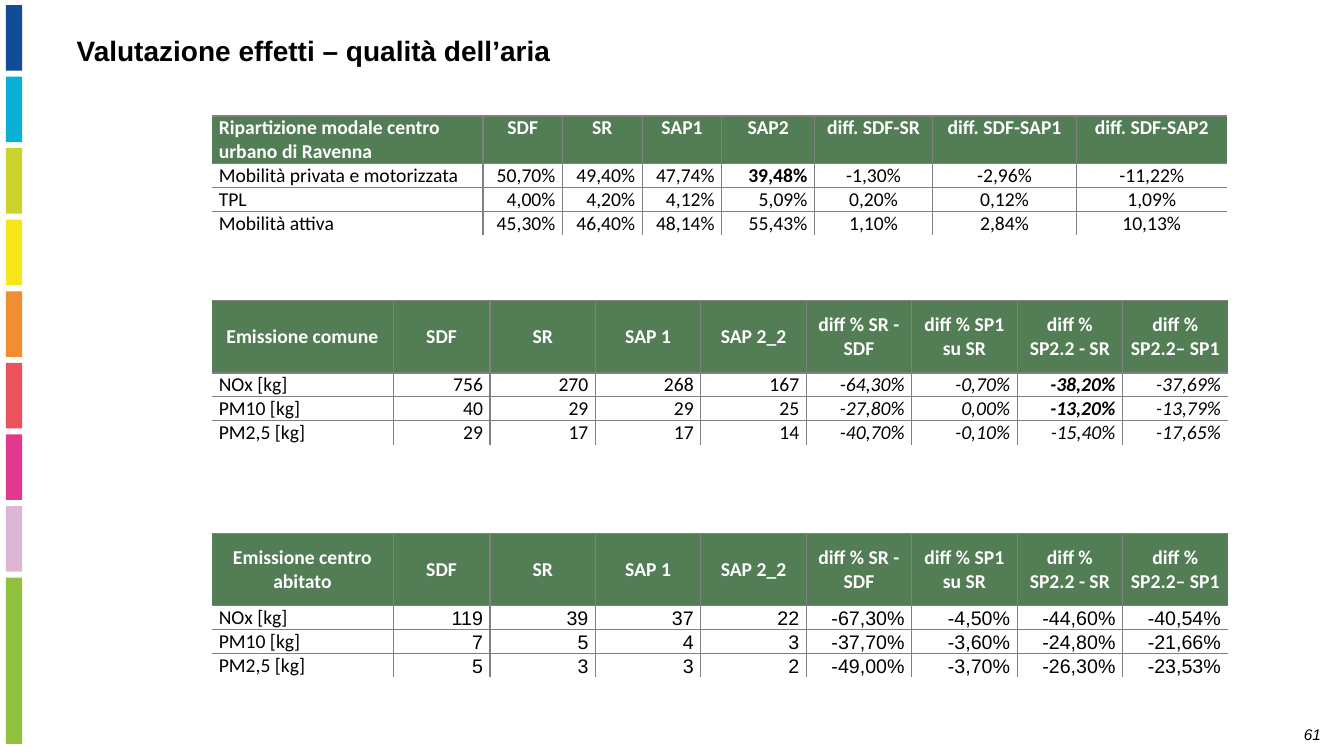
"""Build the slide with air quality tables for Ravenna."""
from dataclasses import dataclass, field

from lxml import etree
from pptx import Presentation
from pptx.dml.color import RGBColor
from pptx.enum.shapes import MSO_SHAPE
from pptx.enum.text import MSO_ANCHOR, MSO_AUTO_SIZE, PP_ALIGN
from pptx.oxml.ns import qn
from pptx.util import Inches, Pt

LEFT, CENTER, RIGHT = PP_ALIGN.LEFT, PP_ALIGN.CENTER, PP_ALIGN.RIGHT
TOP, MIDDLE, BOTTOM = MSO_ANCHOR.TOP, MSO_ANCHOR.MIDDLE, MSO_ANCHOR.BOTTOM
RECTANGLE = MSO_SHAPE.RECTANGLE
NO_AUTOFIT = MSO_AUTO_SIZE.NONE


@dataclass(frozen=True)
class Theme:
    ink: str = "000000"
    paper: str = "FFFFFF"
    header: str = "527D55"
    border: str = "808080"
    bars: tuple = ("104C98", "0BAED7", "CCD32A", "F6E719", "F28E32",
                   "EB535B", "E2398D", "DCB6D4", "90C03E")
    font: str = "Arial"
    table_font: str = "Calibri"
    title_size: int = 20
    table_size: int = 14
    page_size: int = 11
    border_width: int = 1


@dataclass(frozen=True)
class Column:
    width: float
    align: PP_ALIGN = RIGHT
    italic: bool = False


@dataclass(frozen=True)
class DataTable:
    top: float
    header_height: float
    columns: list
    rows: list
    header_align: PP_ALIGN = CENTER
    header_anchor: MSO_ANCHOR = MIDDLE
    value_anchor: MSO_ANCHOR = TOP
    value_font: str = "Calibri"
    bold: set = field(default_factory=set)


THEME = Theme()
TABLE_LEFT, TABLE_WIDTH, ROW_HEIGHT = 2.1, 10.08, 0.23
LABEL_WIDTH, SDF_WIDTH = 1.8, 0.96
VALUE_WIDTH = (TABLE_WIDTH - LABEL_WIDTH - SDF_WIDTH) / 7
EMISSION_HEADS = ["SDF", "SR", "SAP 1", "SAP 2_2", "diff % SR - SDF", "diff % SP1 su SR",
                  "diff % SP2.2 - SR", "diff % SP2.2– SP1"]


def emission_columns(italic: bool) -> list:
    """Return the columns of an emission table."""
    return ([Column(LABEL_WIDTH, LEFT), Column(SDF_WIDTH)] + [Column(VALUE_WIDTH)] * 3
            + [Column(VALUE_WIDTH, italic=italic)] * 4)


TABLES = [
    DataTable(
        1.15, 0.47,
        [Column(2.69, LEFT)] + [Column(0.79)] * 3
        + [Column(0.92), Column(1.17, CENTER), Column(1.43, CENTER), Column(1.49, CENTER)],
        [["Ripartizione modale centro urbano di Ravenna", "SDF", "SR", "SAP1", "SAP2",
          "diff. SDF-SR", "diff. SDF-SAP1", "diff. SDF-SAP2"],
         ["Mobilità privata e motorizzata", "50,70%", "49,40%", "47,74%", "39,48%",
          "-1,30%", "-2,96%", "-11,22%"],
         ["TPL", "4,00%", "4,20%", "4,12%", "5,09%", "0,20%", "0,12%", "1,09%"],
         ["Mobilità attiva", "45,30%", "46,40%", "48,14%", "55,43%",
          "1,10%", "2,84%", "10,13%"]],
        header_align=LEFT, header_anchor=TOP, bold={(1, 4)}),
    DataTable(
        2.98, 0.72, emission_columns(italic=True),
        [["Emissione comune"] + EMISSION_HEADS,
         ["NOx [kg]", "756", "270", "268", "167", "-64,30%", "-0,70%", "-38,20%", "-37,69%"],
         ["PM10 [kg]", "40", "29", "29", "25", "-27,80%", "0,00%", "-13,20%", "-13,79%"],
         ["PM2,5 [kg]", "29", "17", "17", "14", "-40,70%", "-0,10%", "-15,40%", "-17,65%"]],
        bold={(1, 7), (2, 7)}),
    DataTable(
        5.29, 0.72, emission_columns(italic=False),
        [["Emissione centro abitato"] + EMISSION_HEADS,
         ["NOx [kg]", "119", "39", "37", "22", "-67,30%", "-4,50%", "-44,60%", "-40,54%"],
         ["PM10 [kg]", "7", "5", "4", "3", "-37,70%", "-3,60%", "-24,80%", "-21,66%"],
         ["PM2,5 [kg]", "5", "3", "3", "2", "-49,00%", "-3,70%", "-26,30%", "-23,53%"]],
        value_anchor=BOTTOM, value_font=THEME.font),
]


def write(tf, text: str, *, size: int, font: str = THEME.font, color: str = THEME.ink,
          bold: bool = False, italic: bool = False, align: PP_ALIGN = LEFT,
          line_spacing: float = 1.0) -> None:
    """Write one formatted paragraph into a text frame."""
    tf.word_wrap = True
    p = tf.paragraphs[0]
    p.alignment, p.line_spacing = align, line_spacing
    r = p.add_run()
    r.text = text
    r.font.name, r.font.size = font, Pt(size)
    r.font.bold, r.font.italic = bold, italic
    r.font.color.rgb = RGBColor.from_string(color)


def set_borders(cell, shown: dict) -> None:
    """Draw the shown sides of a cell and hide the others."""
    tc_pr = cell._tc.get_or_add_tcPr()
    for side, visible in shown.items():
        ln = etree.SubElement(tc_pr, qn(f"a:ln{side}"), w=str(Pt(THEME.border_width)))
        if visible:
            fill = etree.SubElement(ln, qn("a:solidFill"))
            etree.SubElement(fill, qn("a:srgbClr"), val=THEME.border)
        else:
            etree.SubElement(ln, qn("a:noFill"))


def add_bars(s) -> None:
    """Add the coloured strip along the left edge."""
    for i, color in enumerate(THEME.bars):
        height = 1.65 if i == len(THEME.bars) - 1 else 0.65
        bar = s.shapes.add_shape(RECTANGLE, Inches(0.06), Inches(0.05 + 0.71 * i),
                                 Inches(0.16), Inches(height))
        bar.shadow.inherit = False
        bar.fill.solid()
        bar.fill.fore_color.rgb = RGBColor.from_string(color)
        bar.line.fill.background()


def add_data_table(s, data: DataTable) -> None:
    """Add one table with its header, values and borders."""
    n_rows, n_cols = len(data.rows), len(data.columns)
    heights = [data.header_height] + [ROW_HEIGHT] * (n_rows - 1)
    table = s.shapes.add_table(n_rows, n_cols, Inches(TABLE_LEFT), Inches(data.top),
                               Inches(TABLE_WIDTH), Inches(sum(heights))).table
    table.horz_banding = False
    for c, column in enumerate(data.columns):
        table.columns[c].width = Inches(column.width)
    for r, values in enumerate(data.rows):
        table.rows[r].height = Inches(heights[r])
        for c, (text, column) in enumerate(zip(values, data.columns)):
            cell = table.cell(r, c)
            cell.margin_left = cell.margin_right = Inches(0.07)
            cell.margin_top = cell.margin_bottom = 0
            set_borders(cell, {"L": c > 0, "R": c < n_cols - 1, "T": True, "B": r < n_rows - 1})
            if r == 0:
                cell.fill.solid()
                cell.fill.fore_color.rgb = RGBColor.from_string(THEME.header)
                cell.vertical_anchor = data.header_anchor
                write(cell.text_frame, text, size=THEME.table_size, font=THEME.table_font,
                      color=THEME.paper, bold=True, align=CENTER if c else data.header_align)
            else:
                cell.fill.background()
                cell.vertical_anchor = data.value_anchor if c else TOP
                write(cell.text_frame, text, size=THEME.table_size,
                      font=data.value_font if c else THEME.table_font,
                      bold=(r, c) in data.bold, italic=column.italic, align=column.align)


def main() -> None:
    """Build and save the presentation."""
    prs = Presentation()
    prs.slide_width, prs.slide_height = Inches(13.33), Inches(7.5)
    s = prs.slides.add_slide(prs.slide_layouts[5])
    add_bars(s)
    title = s.shapes.title
    title.left, title.top = Inches(0.66), Inches(0.35)
    title.width, title.height = Inches(10.43), Inches(0.6)
    tf = title.text_frame
    tf.auto_size, tf.vertical_anchor = NO_AUTOFIT, TOP
    write(tf, "Valutazione effetti – qualità dell’aria", size=THEME.title_size,
          bold=True, line_spacing=0.8)
    for data in TABLES:
        add_data_table(s, data)
    page = s.shapes.add_textbox(Inches(12.02), Inches(7.14), Inches(1.18), Inches(0.29))
    write(page.text_frame, "61", size=THEME.page_size, italic=True, align=RIGHT)
    prs.save("out.pptx")


if __name__ == "__main__":
    main()
